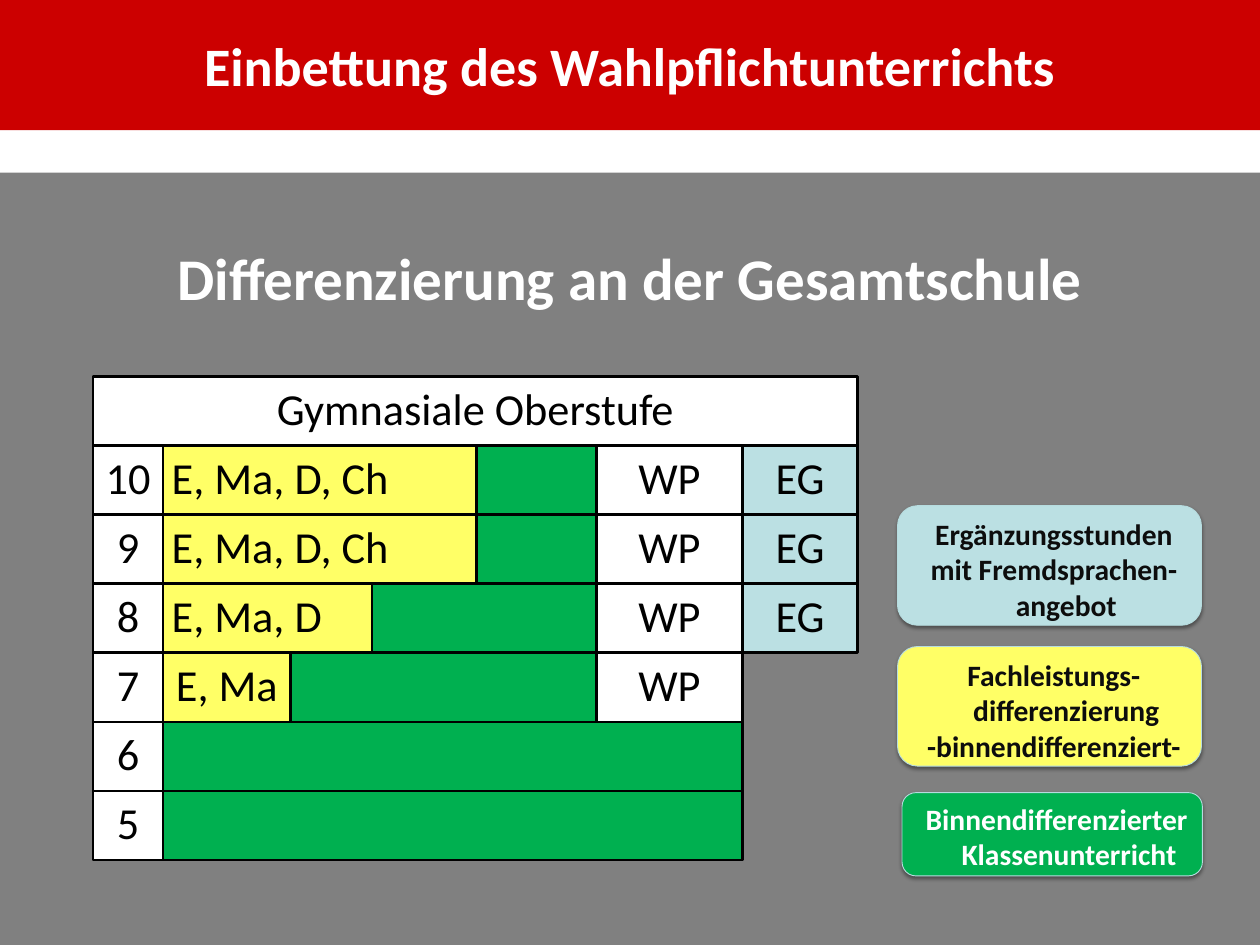
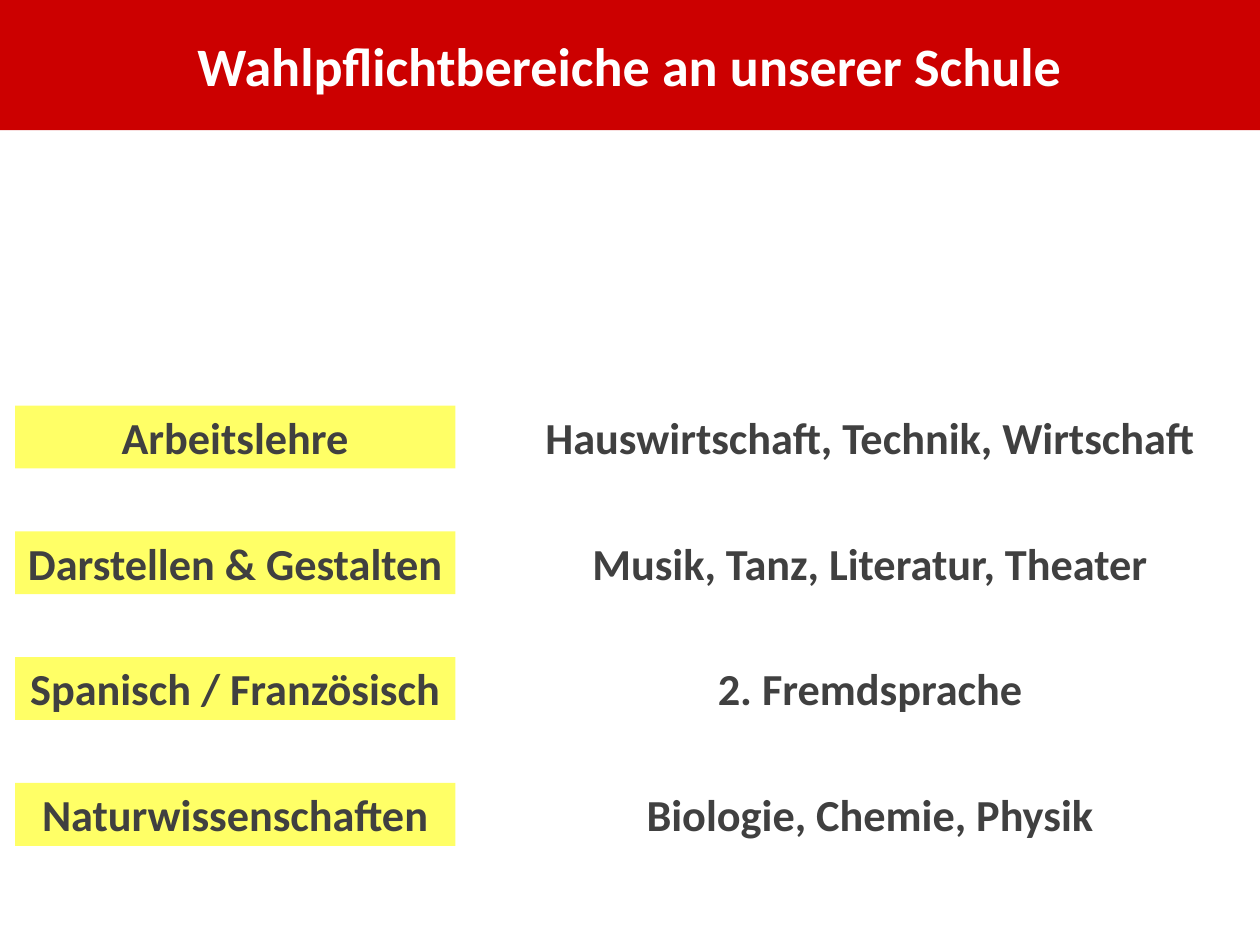
import pptx
import pptx.dml.color
import pptx.enum.shapes
import pptx.enum.text
import pptx.oxml
import pptx.oxml.ns
import pptx.util

Inches = pptx.util.Inches
Pt = pptx.util.Pt
rgb = pptx.dml.color.RGBColor.from_string
RECT = pptx.enum.shapes.MSO_SHAPE.RECTANGLE
ROUNDED = pptx.enum.shapes.MSO_SHAPE.ROUNDED_RECTANGLE
CENTER = pptx.enum.text.PP_ALIGN.CENTER
LEFT = pptx.enum.text.PP_ALIGN.LEFT
TOP = pptx.enum.text.MSO_ANCHOR.TOP
MIDDLE = pptx.enum.text.MSO_ANCHOR.MIDDLE

FONT = "Calibri"
RED, GRAY, WHITE, BLACK = "CC0000", "808080", "FFFFFF", "000000"
GREEN, YELLOW, BLUE = "00B050", "FFFF66", "BBE0E3"
LEGEND_EDGE, LEGEND_TEXT, DARK_GRAY = "B6DCDF", "0D0D0D", "404040"
SLIDE_W, SLIDE_H = 14.22, 10.67

prs = pptx.Presentation()
prs.slide_width, prs.slide_height = Inches(SLIDE_W), Inches(SLIDE_H)


def fill_band(band, text, top, height, fill, size, anchor):
    """Turn a placeholder into a full-width coloured band with white text."""
    band.left, band.top = Inches(0), Inches(top)
    band.width, band.height = Inches(SLIDE_W), Inches(height)
    band.fill.solid()
    band.fill.fore_color.rgb = rgb(fill)
    band.text_frame.text = text
    band.text_frame.vertical_anchor = anchor
    heading = band.text_frame.paragraphs[0]
    heading.alignment = CENTER
    heading.space_before = Pt(0)
    heading.font.name, heading.font.size, heading.font.bold = FONT, Pt(size), True
    heading.font.color.rgb = rgb(WHITE)


def add_box(slide, place, text, fill, color=BLACK, size=36, bold=False,
            align=CENTER, line=None, line_width=2, shape=RECT):
    box = slide.shapes.add_shape(shape, *[Inches(length) for length in place])
    box.shadow.inherit = False
    box.fill.solid()
    box.fill.fore_color.rgb = rgb(fill)
    if line:
        box.line.color.rgb = rgb(line)
        box.line.width = Pt(line_width)
    else:
        box.line.fill.background()
    if text:
        box.text_frame.text = text
        box.text_frame.vertical_anchor = TOP
        for paragraph in box.text_frame.paragraphs:
            paragraph.alignment = align
            paragraph.font.name, paragraph.font.size = FONT, Pt(size)
            paragraph.font.bold = bold
            paragraph.font.color.rgb = rgb(color)
    return box


# Both slides with their red title band
TITLE_AND_BODY, TITLE_ONLY = 1, 5
slides = []
for layout, title in [
    (TITLE_AND_BODY, "Einbettung des Wahlpflichtunterrichts"),
    (TITLE_ONLY, "Wahlpflichtbereiche an unserer Schule"),
]:
    slide = prs.slides.add_slide(prs.slide_layouts[layout])
    fill_band(slide.shapes.title, title, 0, 1.47, RED, 44, MIDDLE)
    slides.append(slide)
embedding, subjects = slides

# Slide 1: grey area with its heading
area = embedding.placeholders[1]
fill_band(area, "Differenzierung an der Gesamtschule", 1.95, 8.72, GRAY, 48, TOP)
area.text_frame.margin_top = Inches(0.78)
area_props = area.text_frame.paragraphs[0]._p.get_or_add_pPr()
area_props.set("marL", "0")
area_props.set("indent", "0")
area_props.append(pptx.oxml.parse_xml(
    f'<a:buNone {pptx.oxml.ns.nsdecls("a")}/>'))

# Slide 1: one row per school year; each cell is (right edge, text, fill, alignment)
GRID_LEFT, GRID_TOP, ROW_H = 1.05, 4.25, 0.78
YEAR_END, CORE_END, WP_END, EG_END = 1.84, 6.73, 8.38, 9.68
core_rest = (CORE_END, "", GREEN, CENTER)
wp = (WP_END, "WP", WHITE, CENTER)
eg = (EG_END, "EG", BLUE, CENTER)
all_green = (WP_END, "", GREEN, CENTER)
four_subjects = (5.38, "E, Ma, D, Ch", YELLOW, LEFT)
school_years = [
    ("10", [four_subjects, core_rest, wp, eg]),
    ("9", [four_subjects, core_rest, wp, eg]),
    ("8", [(4.2, "E, Ma, D", YELLOW, LEFT), core_rest, wp, eg]),
    ("7", [(3.28, "E, Ma", YELLOW, CENTER), core_rest, wp]),
    ("6", [all_green]),
    ("5", [all_green]),
]
rows = [[(EG_END, "Gymnasiale Oberstufe", WHITE, CENTER)]]
rows += [[(YEAR_END, year, WHITE, CENTER)] + cells for year, cells in school_years]
for index, cells in enumerate(rows):
    left = GRID_LEFT
    for right, text, fill, align in cells:
        place = (left, GRID_TOP + index * ROW_H, right - left, ROW_H)
        add_box(embedding, place, text, fill, align=align, line=BLACK)
        left = right

# Slide 1: legend with a soft shadow
SHADOW = (f'<a:outerShdw {pptx.oxml.ns.nsdecls("a")} blurRad="39370" dist="20320" '
          'dir="5400000" rotWithShape="0"><a:srgbClr val="000000">'
          '<a:alpha val="38000"/></a:srgbClr></a:outerShdw>')
for place, text, fill, color in [
    ((10.13, 5.71, 3.43, 1.35), "Ergänzungsstunden\nmit Fremdsprachen-angebot",
     BLUE, LEGEND_TEXT),
    ((10.13, 7.3, 3.43, 1.35), "Fachleistungs-differenzierung\n-binnendifferenziert-",
     YELLOW, LEGEND_TEXT),
    ((10.18, 8.95, 3.39, 0.94), "Binnendifferenzierter Klassenunterricht",
     GREEN, WHITE),
]:
    entry = add_box(embedding, place, text, fill, color, 24, True,
                    line=LEGEND_EDGE, line_width=0.75, shape=ROUNDED)
    effects = entry._element.spPr.find(pptx.oxml.ns.qn("a:effectLst"))
    effects.append(pptx.oxml.parse_xml(SHADOW))
    for paragraph in entry.text_frame.paragraphs:
        props = paragraph._p.get_or_add_pPr()
        props.set("marL", str(Inches(0.38)))
        props.set("indent", str(Inches(-0.28)))

# Slide 2: subject areas and what they cover
AREA_TOP, AREA_STEP, AREA_H = 4.58, 1.42, 0.71
for index, (subject, contents) in enumerate([
    ("Arbeitslehre", "Hauswirtschaft, Technik, Wirtschaft"),
    ("Darstellen & Gestalten", "Musik, Tanz, Literatur, Theater"),
    ("Spanisch / Französisch", "2. Fremdsprache"),
    ("Naturwissenschaften", "Biologie, Chemie, Physik"),
]):
    top = AREA_TOP + index * AREA_STEP
    add_box(subjects, (0.17, top, 4.97, AREA_H), subject, YELLOW, DARK_GRAY, bold=True)
    add_box(subjects, (5.7, top, 8.24, AREA_H), contents, WHITE, DARK_GRAY, bold=True)

prs.save("out.pptx")
